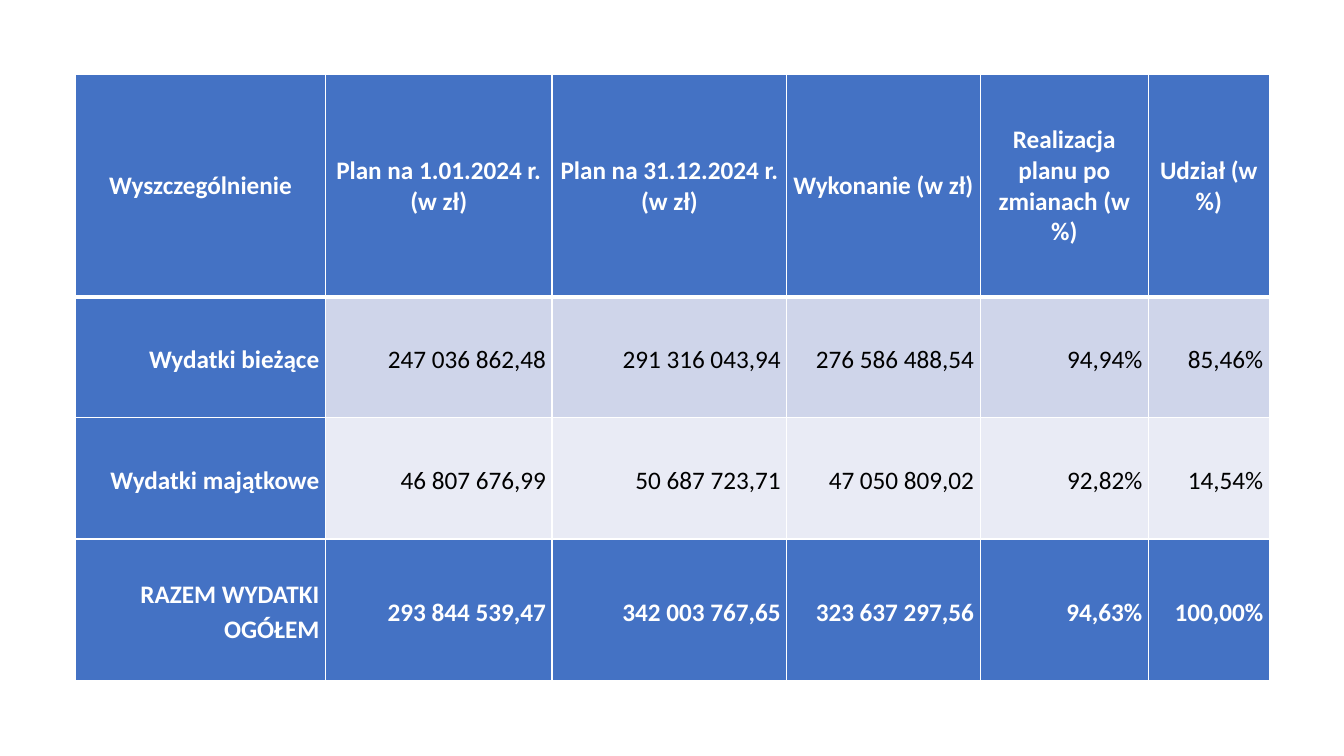
import pptx
import pptx.dml.color
import pptx.enum.text
import pptx.oxml
import pptx.oxml.ns
import pptx.util
from pptx.util import Inches

COLORS = {
    "accent": "4472C4",
    "band_dark": "CFD5EA",
    "band_light": "E9EBF5",
    "white": "FFFFFF",
    "black": "000000",
}
FONT = "Calibri"
COLUMN_WIDTHS = [2.48, 2.25, 2.33, 1.92, 1.67, 1.2]
ROW_HEIGHTS = [2.2, 1.2, 1.2, 1.4]
ROWS = [
    ["Wyszczególnienie", "Plan na 1.01.2024 r. (w zł)", "Plan na 31.12.2024 r. (w zł)",
     "Wykonanie (w zł)", "Realizacja planu po zmianach (w %)", "Udział (w %)"],
    ["Wydatki bieżące", "247 036 862,48", "291 316 043,94", "276 586 488,54", "94,94%", "85,46%"],
    ["Wydatki majątkowe", "46 807 676,99", "50 687 723,71", "47 050 809,02", "92,82%", "14,54%"],
    ["RAZEM WYDATKI OGÓŁEM", "293 844 539,47", "342 003 767,65", "323 637 297,56", "94,63%", "100,00%"],
]
ROW_FILLS = ["accent", "band_dark", "band_light", "accent"]


def rgb(name):
    """Return the named colour."""
    return pptx.dml.color.RGBColor.from_string(COLORS[name])


def write_text(frame, text, *, color, bold, align, line_spacing, size=18):
    """Write one formatted paragraph into a text frame."""
    para = frame.paragraphs[0]
    para.alignment = align
    para.line_spacing = line_spacing
    para.space_after = pptx.util.Pt(8)
    span = para.add_run()
    span.text = text
    span.font.name = FONT
    span.font.size = pptx.util.Pt(size)
    span.font.bold = bold
    span.font.color.rgb = rgb(color)


def add_borders(cell, top, bottom):
    """Draw white borders around a cell, with top and bottom widths in points."""
    namespace = pptx.oxml.ns.nsdecls("a")
    properties = cell._tc.get_or_add_tcPr()
    for side, width in (("L", 1), ("R", 1), ("T", top), ("B", bottom)):
        properties.append(pptx.oxml.parse_xml(
            f'<a:ln{side} {namespace} w="{pptx.util.Pt(width)}"><a:solidFill>'
            f'<a:srgbClr val="{COLORS["white"]}"/></a:solidFill></a:ln{side}>'))


def fill_cell(cell, text, row, column):
    """Format a cell by its place in the table and write its text."""
    is_header = row == 0
    fill = "accent" if column == 0 else ROW_FILLS[row]
    on_accent = fill == "accent"
    add_borders(cell, top=3 if row == 1 else 1, bottom=3 if is_header else 1)
    cell.fill.solid()
    cell.fill.fore_color.rgb = rgb(fill)
    cell.vertical_anchor = pptx.enum.text.MSO_ANCHOR.MIDDLE
    cell.margin_left = cell.margin_right = Inches(0.06)
    cell.margin_top, cell.margin_bottom = Inches(0.01), 0
    alignment = pptx.enum.text.PP_ALIGN
    write_text(cell.text_frame, text,
               color="white" if on_accent else "black", bold=on_accent,
               align=alignment.CENTER if is_header else alignment.RIGHT,
               line_spacing=1.0 if is_header else 1.15)


def add_spending_table(page, left, top, width, height):
    """Place the spending table in the given box, in inches."""
    table = page.shapes.add_table(
        len(ROWS), len(COLUMN_WIDTHS),
        Inches(left), Inches(top), Inches(width), Inches(height)).table
    for column, share in zip(table.columns, COLUMN_WIDTHS):
        column.width = Inches(width * share / sum(COLUMN_WIDTHS))
    for row, share in zip(table.rows, ROW_HEIGHTS):
        row.height = Inches(height * share / sum(ROW_HEIGHTS))
    for row, texts in enumerate(ROWS):
        for column, text in enumerate(texts):
            fill_cell(table.cell(row, column), text, row, column)


def main():
    """Build and save the deck."""
    deck = pptx.Presentation()
    deck.slide_width, deck.slide_height = Inches(13.33), Inches(7.5)
    page = deck.slides.add_slide(deck.slide_layouts[6])
    add_spending_table(page, 0.75, 0.74, 11.84, 6.01)
    deck.save("out.pptx")


if __name__ == "__main__":
    main()
